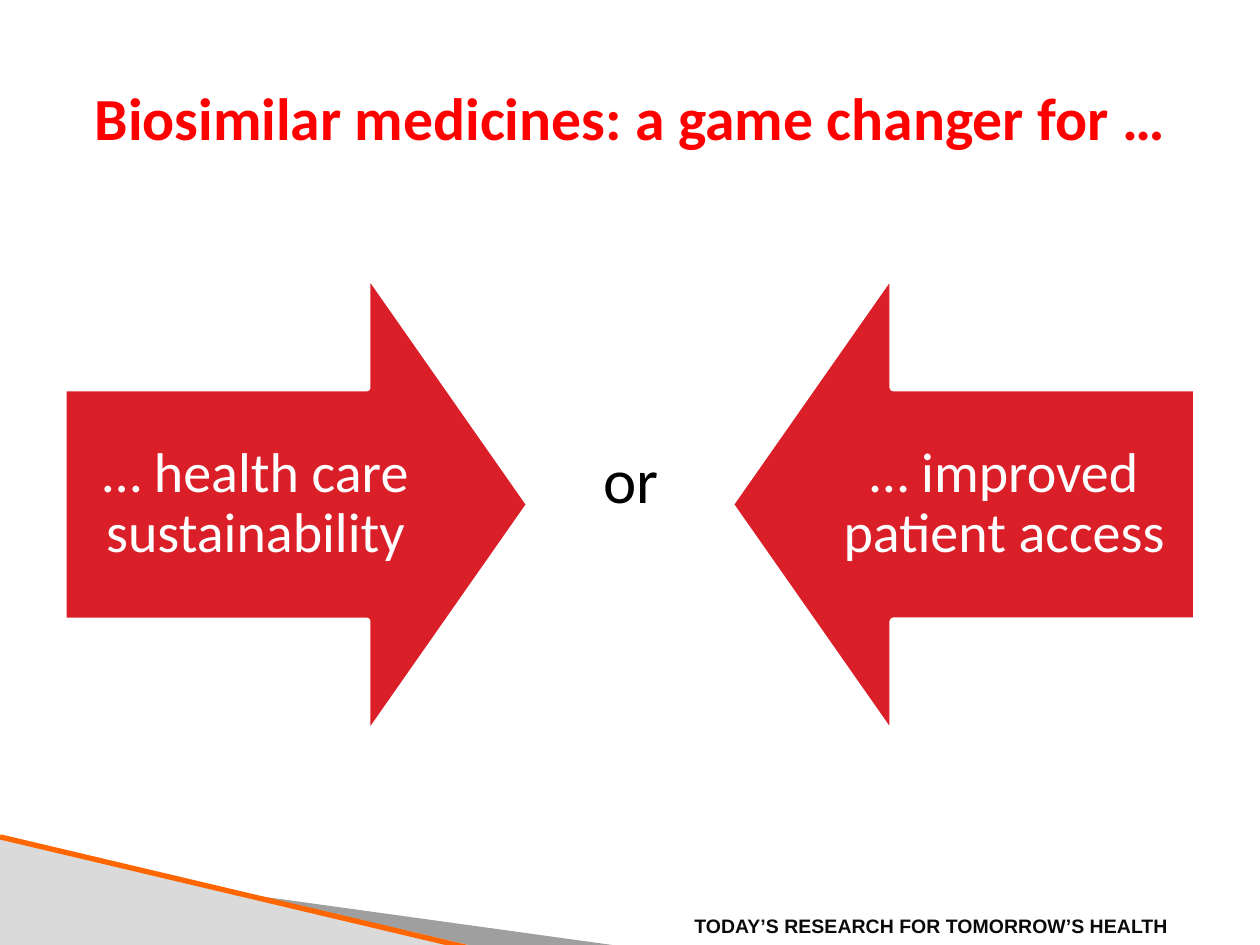
from dataclasses import dataclass

from lxml import etree
from pptx import Presentation
from pptx.dml.color import RGBColor
from pptx.enum import shapes, text
from pptx.oxml import ns
from pptx.util import Cm, Pt


@dataclass(frozen=True)
class Theme:
    red: str = "DA1F28"
    title: str = "FF0000"
    white: str = "FFFFFF"
    black: str = "000000"
    ink: str = "0A0A0A"
    shade: str = "101010"
    pale: str = "DADADA"
    orange: str = "FF6600"
    body: str = "Calibri"
    foot: str = "Arial"
    head_pt: float = 34.1
    or_pt: float = 36
    arrow_pt: float = 32
    foot_pt: float = 11.1


@dataclass(frozen=True)
class Box:
    x: float
    y: float
    w: float
    h: float

    def place(self) -> tuple:
        return Cm(self.x), Cm(self.y), Cm(self.w), Cm(self.h)


@dataclass(frozen=True)
class Label:
    words: str
    box: Box
    size: float
    color: str
    font: str = "Calibri"
    bold: bool = False
    align: text.PP_ALIGN = text.PP_ALIGN.CENTER
    anchor: text.MSO_ANCHOR = text.MSO_ANCHOR.TOP
    inset: float = 0
    lines: float = 1


@dataclass(frozen=True)
class Arrow:
    words: str
    left: bool
    turn: int


WIDE, HIGH, EDGE = 25.4, 19.05, 1.27
SIDE, BODY = 9.42, 7.77
ARROWS = (
    Arrow("… health care sustainability", True, 270),
    Arrow("… improved patient access", False, 90),
)
THEME = Theme()


def paint(shape, color: str) -> None:
    shape.shadow.inherit = False
    shape.fill.solid()
    shape.fill.fore_color.rgb = RGBColor.from_string(color)
    shape.line.fill.background()


def write(slide, label: Label) -> None:
    frame = slide.shapes.add_textbox(*label.box.place()).text_frame
    frame.word_wrap = True
    frame.vertical_anchor = label.anchor
    if label.inset:
        frame.margin_left = frame.margin_right = Cm(label.inset)
        frame.margin_top = frame.margin_bottom = Cm(label.inset)
    para = frame.paragraphs[0]
    para.alignment = label.align
    para.line_spacing = label.lines
    run = para.add_run()
    run.text = label.words
    run.font.name = label.font
    run.font.size = Pt(label.size)
    run.font.bold = label.bold
    run.font.color.rgb = RGBColor.from_string(label.color)


def draw_base(slide) -> None:
    """Draw the grey wedges and the orange rule at the lower left."""
    pts = [(-1.4, 17.15), (12.34, HIGH), (8.79, HIGH), (-1.4, 17.12)]
    first, *rest = [(Cm(x), Cm(y)) for x, y in pts]
    path = slide.shapes.build_freeform(*first)
    path.add_line_segments(rest, close=True)
    wedge = path.convert_to_shape()
    paint(wedge, THEME.shade)
    tint = wedge.fill._xPr.find(ns.qn("a:solidFill"))[0]
    etree.SubElement(tint, ns.qn("a:alpha"), val="40000")

    top = 16.87
    box = Box(0, top, 9.45, HIGH - top)
    kind = shapes.MSO_SHAPE.RIGHT_TRIANGLE
    paint(slide.shapes.add_shape(kind, *box.place()), THEME.pale)

    rule = slide.shapes.add_connector(
        shapes.MSO_CONNECTOR.STRAIGHT, Cm(0), Cm(top), Cm(9.42), Cm(19.1))
    rule.line.color.rgb = RGBColor.from_string(THEME.orange)
    rule.line.width = Pt(3)
    etree.SubElement(rule._element.spPr, ns.qn("a:effectLst"))


def draw_arrow(slide, arrow: Arrow) -> None:
    def start(width: float) -> float:
        return EDGE if arrow.left else WIDE - EDGE - width

    box = Box(start(SIDE), 5.46, SIDE, SIDE)
    shape = slide.shapes.add_shape(shapes.MSO_SHAPE.DOWN_ARROW, *box.place())
    shape.rotation = arrow.turn
    shape.adjustments[0] = 0.5
    shape.adjustments[1] = 0.35
    paint(shape, THEME.red)
    shape.line.color.rgb = RGBColor.from_string(THEME.white)
    shape.line.width = Pt(4.33)
    write(slide, Label(
        arrow.words, Box(start(BODY), 7.82, BODY, 4.7), THEME.arrow_pt,
        THEME.white, THEME.body, anchor=text.MSO_ANCHOR.MIDDLE,
        inset=0.64, lines=0.9))


def main() -> None:
    deck = Presentation()
    deck.slide_width, deck.slide_height = Cm(WIDE), Cm(HIGH)
    slide = deck.slides.add_slide(deck.slide_layouts[6])
    draw_base(slide)
    write(slide, Label(
        "TODAY’S RESEARCH FOR TOMORROW’S HEALTH ",
        Box(12.34, 18.31, 11.56, 0.74), THEME.foot_pt, THEME.ink,
        THEME.foot, True, text.PP_ALIGN.RIGHT))
    for arrow in ARROWS:
        draw_arrow(slide, arrow)
    write(slide, Label(
        "Biosimilar medicines: a game changer for …",
        Box(EDGE, 0.76, WIDE - 2 * EDGE, 3.18), THEME.head_pt, THEME.title,
        THEME.body, True, anchor=text.MSO_ANCHOR.MIDDLE))
    write(slide, Label(
        "or", Box(11.66, 8.76, 2.11, 1.8), THEME.or_pt, THEME.black,
        THEME.body))
    deck.save("out.pptx")


if __name__ == "__main__":
    main()
